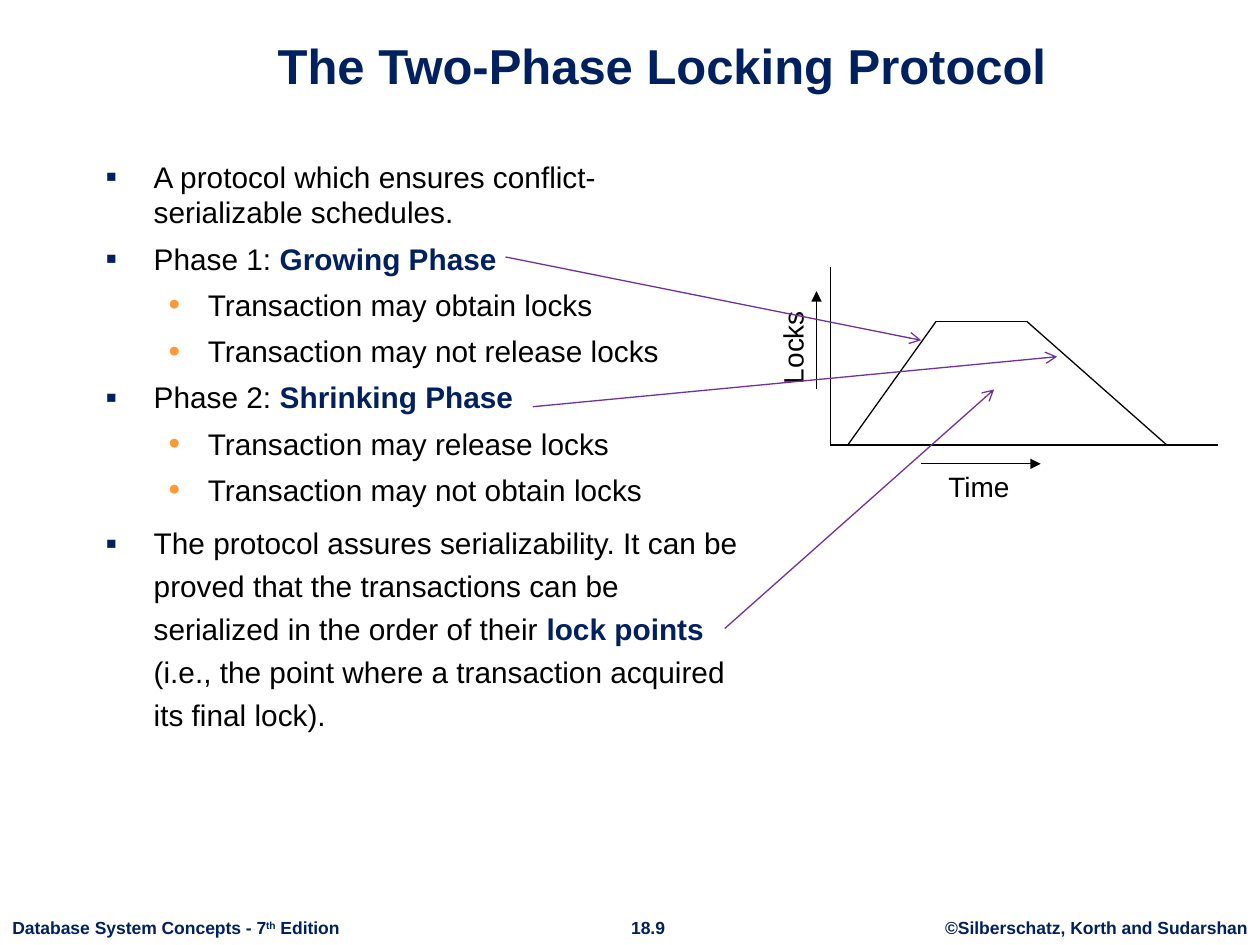
"""Builds the slide on the two-phase locking protocol."""
from lxml import etree
from pptx import Presentation
from pptx.dml.color import RGBColor
from pptx.enum import shapes, text
from pptx.oxml import ns
from pptx.util import Cm, Pt

NAVY = RGBColor(0x00, 0x20, 0x60)
BLACK = RGBColor(0x00, 0x00, 0x00)
ORANGE = RGBColor(0xFF, 0x99, 0x33)
PURPLE = RGBColor(0x70, 0x30, 0xA0)
LEFT, CENTER = text.PP_ALIGN.LEFT, text.PP_ALIGN.CENTER
TOP, BOTTOM = text.MSO_ANCHOR.TOP, text.MSO_ANCHOR.BOTTOM


def write(paragraph, words, size=17, color=BLACK, bold=False, baseline=0):
    span = paragraph.add_run()
    span.text = words
    span.font.name = "Arial"
    span.font.size = Pt(size)
    span.font.bold = bold
    span.font.color.rgb = color
    if baseline:
        span.font._element.set("baseline", str(baseline * 1000))


def draw_line(start, end, color=BLACK, head=None):
    points = [Cm(value) for value in start + end]
    line = page.shapes.add_connector(shapes.MSO_CONNECTOR.STRAIGHT, *points)
    line.line.color.rgb = color
    line.line.width = Pt(0.75)
    if head:
        etree.SubElement(line.line._get_or_add_ln(), ns.qn("a:tailEnd"), type=head)
    etree.SubElement(line._element.spPr, ns.qn("a:effectLst"))


deck = Presentation()
deck.slide_width, deck.slide_height = Cm(25.4), Cm(19.05)
page = deck.slides.add_slide(deck.slide_layouts[6])

footer = {"size": 10, "color": NAVY, "bold": True}
title = {"size": 28, "color": NAVY, "bold": True}
axis = {"size": 16}
labels = [
    ((18.8, 18.36, 6.6, 0.69), ["©Silberschatz, Korth and Sudarshan"], footer, CENTER, TOP, False, 0),
    ((12.34, 18.36, 1.45, 0.69), ["18.9"], footer, CENTER, TOP, False, 0),
    ((0, 18.36, 7.14, 0.69), ["Database System Concepts - 7", "th", " Edition"], footer, LEFT, TOP, False, 0),
    ((2.13, 0.33, 22.43, 1.7), ["The Two-Phase Locking Protocol"], title, CENTER, BOTTOM, True, 0),
    ((18.87, 9.35, 2.24, 0.94), ["Time"], axis, LEFT, TOP, True, 0),
    ((14.86, 6.4, 2.24, 0.94), ["Locks"], axis, LEFT, TOP, True, 270),
]
for place, pieces, style, align, anchor, wrap, angle in labels:
    box = page.shapes.add_textbox(*map(Cm, place))
    box.rotation = angle
    box.text_frame.word_wrap = wrap
    box.text_frame.vertical_anchor = anchor
    para = box.text_frame.paragraphs[0]
    para.alignment = align
    for piece in pieces:
        write(para, piece, baseline=30 if piece == "th" else 0, **style)

term = {"color": NAVY, "bold": True}
points = [
    (0, [("A protocol which ensures conflict-serializable schedules.", {})]),
    (0, [("Phase 1: ", {}), ("Growing Phase", term)]),
    (1, [("Transaction may obtain locks", {})]),
    (1, [("Transaction may not release locks", {})]),
    (0, [("Phase 2: ", {}), ("Shrinking Phase", term)]),
    (1, [("Transaction may release locks", {})]),
    (1, [("Transaction may not obtain locks", {})]),
    (0, [
        ("The protocol assures serializability. It can be proved that the transactions "
         "can be serialized in the order of their ", {}),
        ("lock points ", term),
        ("(i.e., the point where a transaction acquired its final lock).", {}),
    ]),
]
bullets = [("▪", NAVY, 0.97, -0.97), ("•", ORANGE, 2.06, -0.79)]

body = page.shapes.add_textbox(Cm(1.88), Cm(3.07), Cm(13.34), Cm(14.91)).text_frame
body.word_wrap = True
for index, (level, pieces) in enumerate(points):
    para = body.add_paragraph() if index else body.paragraphs[0]
    mark, color, margin, indent = bullets[level]
    para.level = level
    properties = para._p.get_or_add_pPr()
    properties.set("marL", str(Cm(margin)))
    properties.set("indent", str(Cm(indent)))
    tint = etree.SubElement(properties, ns.qn("a:buClr"))
    etree.SubElement(tint, ns.qn("a:srgbClr"), val=str(color))
    etree.SubElement(properties, ns.qn("a:buSzPct"), val="110000")
    etree.SubElement(properties, ns.qn("a:buFont"), typeface="Arial")
    etree.SubElement(properties, ns.qn("a:buChar"), char=mark)
    if index:
        para.space_before = Pt(6)
    for words, style in pieces:
        write(para, words, **style)
body.paragraphs[-1].line_spacing = 1.2

lock_curve = [(17.09, 8.97), (18.87, 6.48), (20.7, 6.48), (23.52, 8.97)]
for start, end in zip(lock_curve, lock_curve[1:]):
    draw_line(start, end)
draw_line((16.74, 5.38), (16.74, 8.97))
draw_line((16.74, 8.97), (24.56, 8.97))
draw_line((18.57, 9.35), (20.98, 9.35), head="triangle")
draw_line((16.46, 7.85), (16.46, 5.87), head="triangle")

pointers = [
    ((10.19, 5.18), (18.57, 6.86)),
    ((10.74, 8.2), (21.31, 7.19)),
    ((14.61, 12.67), (20.04, 7.85)),
]
for start, end in pointers:
    draw_line(start, end, color=PURPLE, head="arrow")

deck.save("out.pptx")
